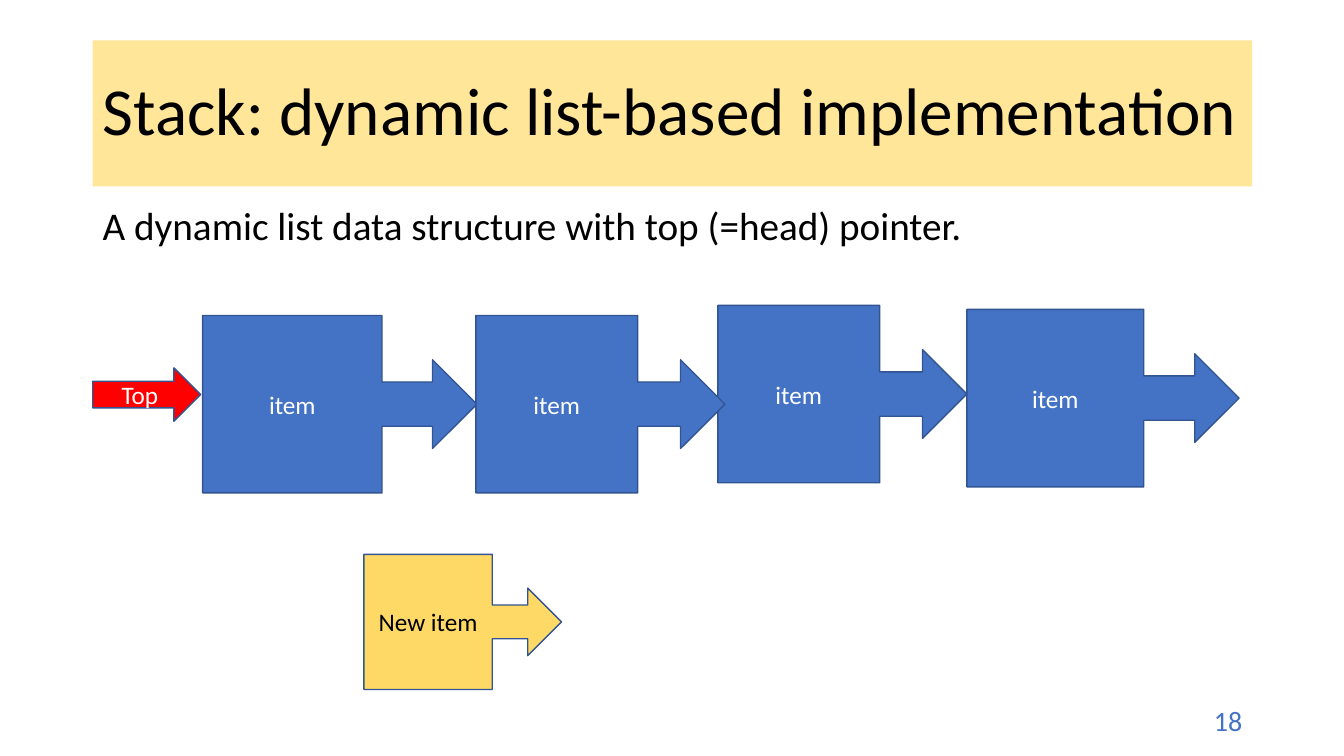
import dataclasses

import pptx
import pptx.dml.color
import pptx.enum.shapes
import pptx.enum.text
import pptx.util

Inches = pptx.util.Inches
Shapes = pptx.enum.shapes.MSO_SHAPE
Align = pptx.enum.text.PP_ALIGN
Anchor = pptx.enum.text.MSO_ANCHOR


@dataclasses.dataclass(frozen=True)
class Theme:
    """Colours, font and type sizes of the slide."""
    font: str = "Calibri"
    dark: str = "000000"
    light: str = "FFFFFF"
    banner: str = "FFE699"
    item: str = "4472C4"
    outline: str = "325491"
    top: str = "FF0000"
    new_item: str = "FFD966"
    title_size: int = 48
    body_size: int = 28
    number_size: int = 20
    label_size: int = 18


THEME = Theme()


def color(code):
    """Turn a hex code into a colour."""
    return pptx.dml.color.RGBColor.from_string(code)


def write(shape, text, size, ink, align=Align.LEFT, anchor=Anchor.MIDDLE,
          line_spacing=1.0, space_before=0):
    """Put one formatted paragraph into a shape."""
    frame = shape.text_frame
    frame.word_wrap = True
    frame.vertical_anchor = anchor
    para = frame.paragraphs[0]
    para.alignment = align
    para.line_spacing = line_spacing
    para.space_before = pptx.util.Pt(space_before)
    span = para.add_run()
    span.text = text
    span.font.name = THEME.font
    span.font.size = pptx.util.Pt(size)
    span.font.color.rgb = color(ink)


def add_filled(page, kind, box, fill, outline=None):
    """Add a flat preset shape with an optional thin outline."""
    shape = page.shapes.add_shape(kind, *map(Inches, box))
    shape.shadow.inherit = False
    shape.fill.solid()
    shape.fill.fore_color.rgb = color(fill)
    if outline:
        shape.line.color.rgb = color(outline)
        shape.line.width = pptx.util.Pt(1)
    else:
        shape.line.fill.background()
    return shape


def add_title(page, box, text):
    """Add the title on its coloured banner."""
    banner = add_filled(page, Shapes.RECTANGLE, box, THEME.banner)
    write(banner, text, THEME.title_size, THEME.dark, line_spacing=0.9)


def add_text(page, box, text, size, ink, **layout):
    """Add a plain text box."""
    write(page.shapes.add_textbox(*map(Inches, box)), text, size, ink, **layout)


def add_node(page, box, text, kind=Shapes.RIGHT_ARROW_CALLOUT,
             fill=THEME.item, ink=THEME.light):
    """Add a labelled list node or pointer and return it."""
    node = add_filled(page, kind, box, fill, THEME.outline)
    write(node, text, THEME.label_size, ink, align=Align.CENTER)
    return node


def add_list(page, box):
    """Add the top pointer and the chain of items inside the box."""
    left, top, width, height = box
    first = add_node(page, (left + 1.09, top + 0.1, 2.72, height), "item")
    first.adjustments[3] = 0.654
    for offset, drop, length in ((8.67, 0.04, 2.7), (6.2, 0, 2.47), (3.8, 0.1, 2.47)):
        add_node(page, (left + offset, top + drop, length, height), "item")
    add_node(page, (left, top + 0.62, 1.07, 0.53), "Top",
             kind=Shapes.RIGHT_ARROW, fill=THEME.top)


def build_stack_slide(deck):
    """Build the slide on the list-based stack."""
    page = deck.slides.add_slide(deck.slide_layouts[6])
    left, width = 0.92, 11.5
    add_title(page, (left, 0.4, width, 1.45), "Stack: dynamic list-based implementation")
    add_text(page, (left, 2, width, 4.95),
             "A dynamic list data structure with top (=head) pointer.",
             THEME.body_size, THEME.dark, anchor=Anchor.TOP,
             line_spacing=0.9, space_before=10)
    add_list(page, (left, 3.03, width, 1.76))
    add_node(page, (3.61, 5.5, 1.96, 1.34), "New item",
             fill=THEME.new_item, ink=THEME.dark)
    add_text(page, (left + width - 3, 6.95, 3, 0.4), "18",
             THEME.number_size, THEME.item, align=Align.RIGHT)


def main():
    """Create and save the deck."""
    deck = pptx.Presentation()
    deck.slide_width = Inches(13.33)
    deck.slide_height = Inches(7.5)
    build_stack_slide(deck)
    deck.save("out.pptx")


if __name__ == "__main__":
    main()
